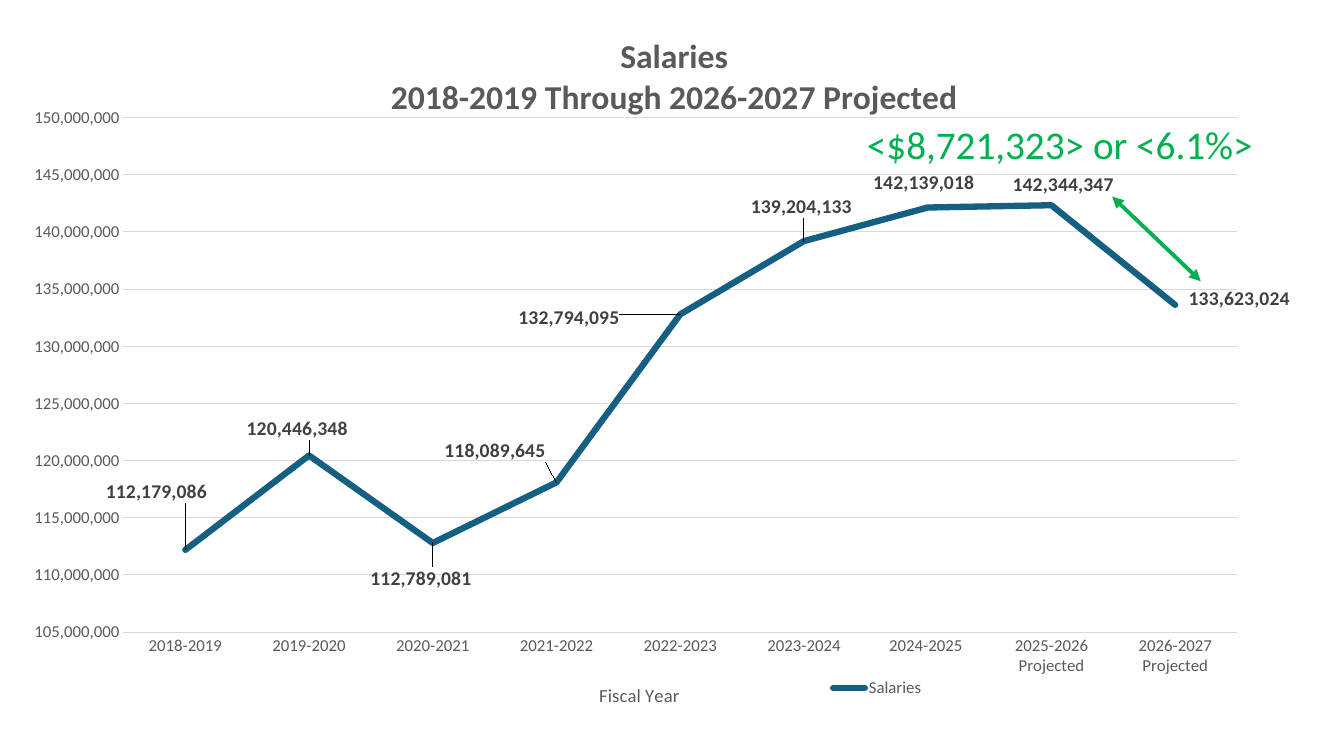
import pptx
import pptx.chart.data
import pptx.dml.color
import pptx.enum.chart
import pptx.enum.shapes
import pptx.enum.text
import pptx.oxml
import pptx.util
from lxml import etree

RGBColor = pptx.dml.color.RGBColor
Inches = pptx.util.Inches
Pt = pptx.util.Pt

BLUE = RGBColor(0x15, 0x60, 0x82)
GREEN = RGBColor(0x00, 0xB0, 0x50)
GRID_GRAY = RGBColor(0xD9, 0xD9, 0xD9)
TEXT_GRAY = RGBColor(0x59, 0x59, 0x59)
LABEL_GRAY = RGBColor(0x40, 0x40, 0x40)
FONT = "Calibri"
NUMBER_FORMAT = "#,##0"

# Fiscal year, salaries, label offset in percent of the chart's width and height
SALARIES = [
    ("2018-2019", 112179086, (-2.2, -6.1)),
    ("2019-2020", 120446348, (-0.9, -1.6)),
    ("2020-2021", 112789081, (-0.9, 7.4)),
    ("2021-2022", 118089645, (-4.7, -2.3)),
    ("2022-2023", 132794095, (-8.5, 2.8)),
    ("2023-2024", 139204133, (-0.2, -2.7)),
    ("2024-2025 ", 142139018, (-0.3, -1.3)),
    ("2025-2026 Projected", 142344347, (0.9, -0.6)),
    ("2026-2027 Projected", 133623024, (4.9, 1.4)),
]


def format_font(font, size, color, bold=False):
    font.name = FONT
    font.size = Pt(size)
    font.bold = bold
    font.color.rgb = color


def write_text(text_frame, text, **font_format):
    text_frame.text = text
    for paragraph in text_frame.paragraphs:
        for run in paragraph.runs:
            format_font(run.font, **font_format)


def format_line(line, color, width):
    line.color.rgb = color
    line.width = Pt(width)


def place(element, index, edge=True, target=None, **percents):
    """Give a chart part a manual layout, in percent of the chart's size."""
    for old_layout in element.xpath("c:layout"):
        element.remove(old_layout)
    settings = [("layoutTarget", target)] if target else []
    if edge:
        settings += [("xMode", "edge"), ("yMode", "edge")]
    settings += [(name, round(value / 100, 4)) for name, value in percents.items()]
    tags = "".join(f'<c:{name} val="{value}"/>' for name, value in settings)
    element.insert(index, pptx.oxml.parse_xml(
        '<c:layout xmlns:c="http://schemas.openxmlformats.org/drawingml/2006/chart">'
        f"<c:manualLayout>{tags}</c:manualLayout></c:layout>"))


def format_axes(chart):
    for axis in (chart.category_axis, chart.value_axis):
        axis.major_tick_mark = pptx.enum.chart.XL_TICK_MARK.NONE
        axis.minor_tick_mark = pptx.enum.chart.XL_TICK_MARK.NONE
        format_font(axis.tick_labels.font, 12, TEXT_GRAY)
    years, amounts = chart.category_axis, chart.value_axis
    format_line(years.format.line, GRID_GRAY, 0.75)
    write_text(years.axis_title.text_frame, "Fiscal Year", size=13.3, color=TEXT_GRAY)
    place(years.axis_title.element, 1, x=44.3, y=96.1)
    amounts.minimum_scale = 105000000
    amounts.maximum_scale = 150000000
    amounts.major_unit = 5000000
    amounts.format.line.fill.background()
    amounts.tick_labels.number_format = NUMBER_FORMAT
    amounts.tick_labels.number_format_is_linked = False
    amounts.has_major_gridlines = True
    format_line(amounts.major_gridlines.format.line, GRID_GRAY, 0.75)


def format_series(series):
    series.smooth = False
    series.marker.style = pptx.enum.chart.XL_MARKER_STYLE.NONE
    format_line(series.format.line, BLUE, 4.5)
    for line_element in series.format.line.fill._xPr.xpath("self::a:ln") or []:
        line_element.set("cap", "rnd")
    for index, (_, _, (x, y)) in enumerate(SALARIES):
        label = series.points[index].data_label
        format_font(label.font, 14, LABEL_GRAY, bold=True)
        label.position = pptx.enum.chart.XL_LABEL_POSITION.ABOVE
        label_element = series.data_labels._element.xpath(f"c:dLbl[c:idx/@val='{index}']")[0]
        place(label_element, 1, edge=False, x=x, y=y)


def add_salary_chart(slide, left, top, width, height):
    data = pptx.chart.data.CategoryChartData(number_format=NUMBER_FORMAT)
    data.categories = [year for year, _, _ in SALARIES]
    data.add_series("Salaries", [amount for _, amount, _ in SALARIES])
    chart = slide.shapes.add_chart(
        pptx.enum.chart.XL_CHART_TYPE.LINE, left, top, width, height, data).chart
    chart.font.name = "Cabin"
    chart.font.size = Pt(10)
    chart.plots[0].vary_by_categories = False
    format_axes(chart)
    format_series(chart.plots[0].series[0])

    chart.has_title = True
    write_text(chart.chart_title.text_frame,
               "Salaries\n2018-2019 Through 2026-2027 Projected",
               size=24, color=TEXT_GRAY, bold=True)
    place(chart.chart_title.element, 1, x=28.4, y=3.5)

    chart.has_legend = True
    chart.legend.position = pptx.enum.chart.XL_LEGEND_POSITION.BOTTOM
    chart.legend.include_in_layout = False
    format_font(chart.legend.font, 12, TEXT_GRAY)
    place(chart.element.xpath(".//c:legend")[0], 1, x=61.8, y=95.3, w=8, h=4)
    place(chart.element.xpath(".//c:plotArea")[0], 0, target="inner",
          x=8.2, y=15.7, w=85.1, h=73.6)


def add_double_arrow(slide, start, end, color, width):
    arrow = slide.shapes.add_connector(
        pptx.enum.shapes.MSO_CONNECTOR.STRAIGHT, *start, *end)
    format_line(arrow.line, color, width)
    namespace = pptx.oxml.ns.qn
    properties = arrow.element.spPr
    line_element = properties.find(namespace("a:ln"))
    for tag in ("a:headEnd", "a:tailEnd"):
        etree.SubElement(line_element, namespace(tag), type="triangle")
    etree.SubElement(properties, namespace("a:effectLst"))


def add_callout(slide, text, left, top, width, height, **font_format):
    text_frame = slide.shapes.add_textbox(left, top, width, height).text_frame
    text_frame.word_wrap = False
    text_frame.auto_size = pptx.enum.text.MSO_AUTO_SIZE.SHAPE_TO_FIT_TEXT
    write_text(text_frame, text, **font_format)


def main():
    presentation = pptx.Presentation()
    presentation.slide_width = Inches(13.33)
    presentation.slide_height = Inches(7.5)
    slide = presentation.slides.add_slide(presentation.slide_layouts[6])
    add_salary_chart(slide, Inches(0.16), Inches(0.08), Inches(12.98), Inches(7))
    add_double_arrow(slide, (Inches(11.03), Inches(1.95)), (Inches(11.91), Inches(2.79)),
                     GREEN, 2.75)
    add_callout(slide, "<$8,721,323> or <6.1%>", Inches(8.5), Inches(1.14),
                Inches(4.08), Inches(0.57), size=28, color=GREEN)
    presentation.save("out.pptx")


if __name__ == "__main__":
    main()
